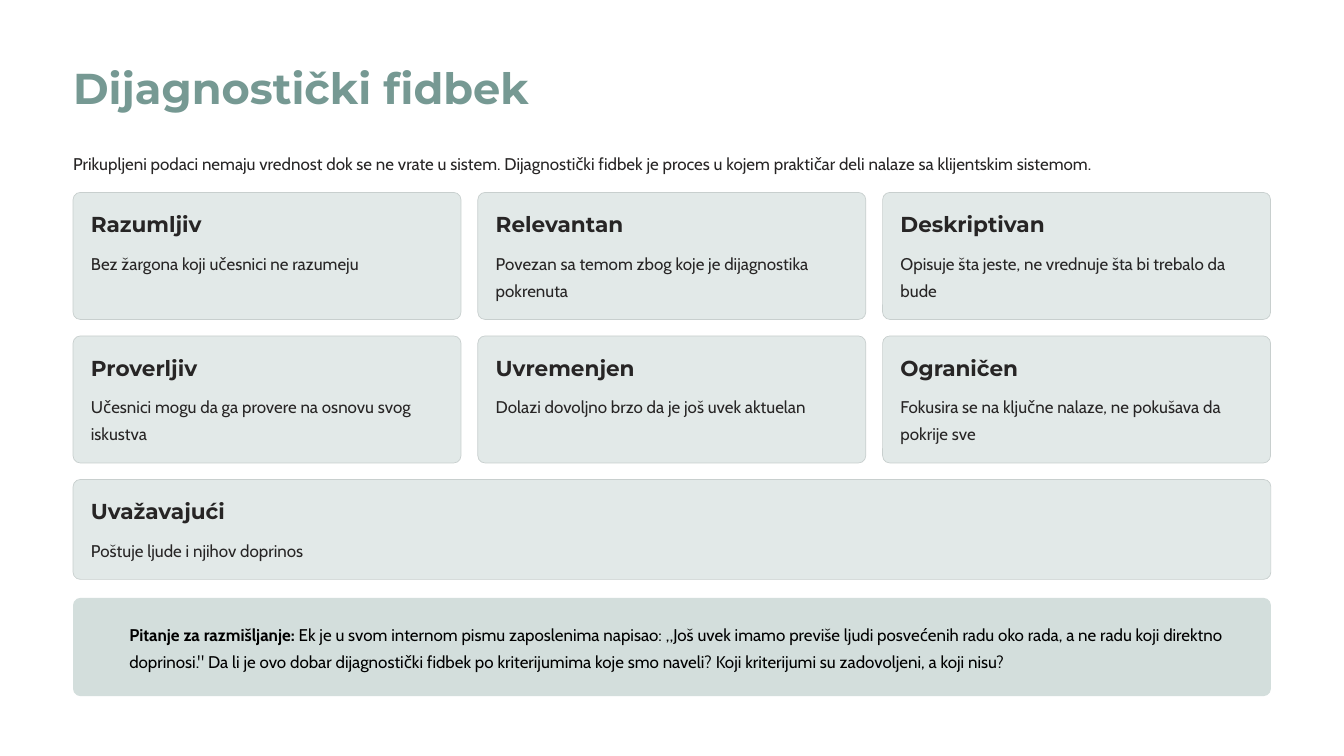
from dataclasses import dataclass

import pptx
import pptx.dml.color
import pptx.enum.shapes
import pptx.enum.text
import pptx.util

Cm = pptx.util.Cm
Pt = pptx.util.Pt

LEFT, FULL_W = 2.21, 36.22
CARD_W, COL_STEP = 11.73, 12.24
TOP, ROW_STEP = 5.82, 4.34
PAD, BODY_DY = 0.54, 1.65
RADIUS = 0.22
INK = "272525"


@dataclass
class Card:
    head: str
    body: str
    col: int
    row: int
    w: float = CARD_W
    h: float = 3.84


CARDS = [
    Card("Razumljiv", "Bez žargona koji učesnici ne razumeju", 0, 0),
    Card("Relevantan", "Povezan sa temom zbog koje je dijagnostika pokrenuta", 1, 0),
    Card("Deskriptivan", "Opisuje šta jeste, ne vrednuje šta bi trebalo da bude", 2, 0),
    Card("Proverljiv", "Učesnici mogu da ga provere na osnovu svog iskustva", 0, 1),
    Card("Uvremenjen", "Dolazi dovoljno brzo da je još uvek aktuelan", 1, 1),
    Card("Ograničen", "Fokusira se na ključne nalaze, ne pokušava da pokrije sve", 2, 1),
    Card("Uvažavajući", "Poštuje ljude i njihov doprinos", 0, 2, FULL_W, 3.02),
]


def rgb(value: str) -> pptx.dml.color.RGBColor:
    return pptx.dml.color.RGBColor.from_string(value)


def add_run(p, text: str, *, size: float = 14.5, font: str = "Cabin",
            color: str = INK, bold: bool = False) -> None:
    r = p.add_run()
    r.text = text
    r.font.size = Pt(size)
    r.font.name = font
    r.font.bold = bold
    r.font.color.rgb = rgb(color)


def first_paragraph(sp, spacing: float = 23):
    tf = sp.text_frame
    tf.word_wrap = True
    tf.auto_size = pptx.enum.text.MSO_AUTO_SIZE.NONE
    tf.vertical_anchor = pptx.enum.text.MSO_ANCHOR.TOP
    tf.margin_left = tf.margin_right = tf.margin_top = tf.margin_bottom = 0
    p = tf.paragraphs[0]
    p.alignment = pptx.enum.text.PP_ALIGN.LEFT
    p.line_spacing = Pt(spacing)
    return p


def add_text(slide, x: float, y: float, w: float, h: float):
    return first_paragraph(slide.shapes.add_textbox(Cm(x), Cm(y), Cm(w), Cm(h)))


def add_panel(slide, x: float, y: float, w: float, h: float,
              fill: str, line: str | None = None) -> None:
    kind = pptx.enum.shapes.MSO_SHAPE.ROUNDED_RECTANGLE
    sp = slide.shapes.add_shape(kind, Cm(x), Cm(y), Cm(w), Cm(h))
    sp.shadow.inherit = False
    sp.adjustments[0] = RADIUS / h
    sp.fill.solid()
    sp.fill.fore_color.rgb = rgb(fill)
    if line:
        sp.line.color.rgb = rgb(line)
        sp.line.width = Pt(0.6)
    else:
        sp.line.fill.background()


def add_card(slide, card: Card) -> None:
    x = LEFT + card.col * COL_STEP
    y = TOP + card.row * ROW_STEP
    text_w = card.w - 2 * PAD
    add_panel(slide, x, y, card.w, card.h, "E2E9E8", "C8CFCE")
    add_run(add_text(slide, x + PAD, y + PAD, 6.55, 0.81), card.head,
            size=18.5, font="Montserrat", bold=True)
    add_run(add_text(slide, x + PAD, y + BODY_DY, text_w, 1.63 if card.row < 2 else 0.81),
            card.body)


def main() -> None:
    prs = pptx.Presentation()
    prs.slide_width, prs.slide_height = Cm(40.64), Cm(22.86)
    slide = prs.slides.add_slide(prs.slide_layouts[5])
    slide.background.fill.solid()
    slide.background.fill.fore_color.rgb = rgb("FFFFFF")

    title = slide.shapes.title
    title.left, title.top, title.width, title.height = Cm(LEFT), Cm(1.8), Cm(FULL_W), Cm(1.63)
    add_run(first_paragraph(title, 46), "Dijagnostički fidbek",
            size=37, font="Montserrat", color="769993", bold=True)

    add_run(add_text(slide, LEFT, 4.45, FULL_W, 0.81),
            "Prikupljeni podaci nemaju vrednost dok se ne vrate u sistem. "
            "Dijagnostički fidbek je proces u kojem praktičar deli nalaze "
            "sa klijentskim sistemom.")

    for card in CARDS:
        add_card(slide, card)

    add_panel(slide, LEFT, 18.08, FULL_W, 2.97, "D3DEDC")
    p = add_text(slide, 3.91, 18.69, 34.01, 1.63)
    add_run(p, "Pitanje za razmišljanje:", color="000000", bold=True)
    add_run(p, " Ek je u svom internom pismu zaposlenima napisao: „Još uvek imamo "
               "previše ljudi posvećenih radu oko rada, a ne radu koji direktno "
               "doprinosi.\" Da li je ovo dobar dijagnostički fidbek po kriterijumima "
               "koje smo naveli? Koji kriterijumi su zadovoljeni, a koji nisu?",
            color="000000")

    prs.save("out.pptx")


if __name__ == "__main__":
    main()
